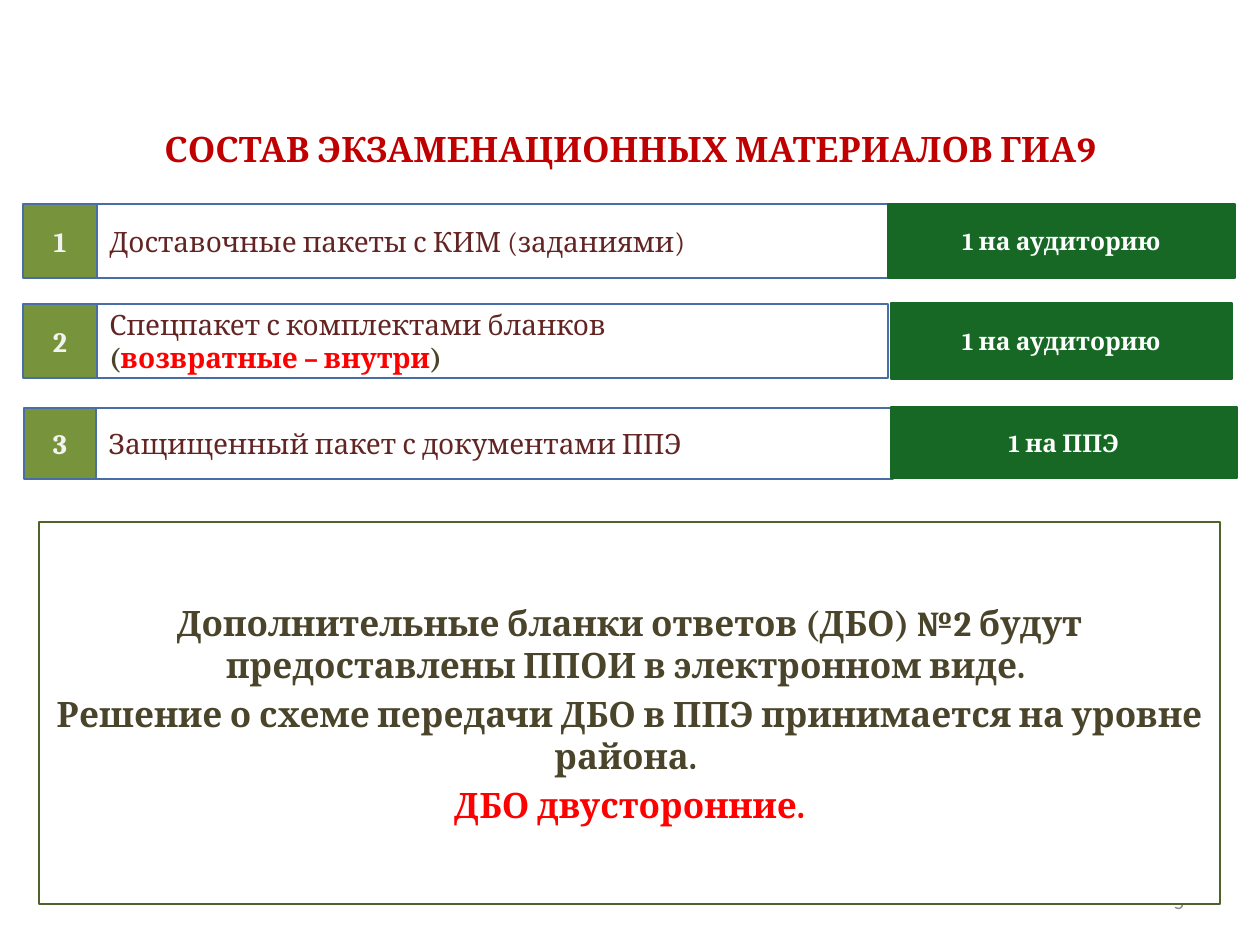
"""Build the slide listing the contents of the GIA-9 exam materials."""
from pptx import Presentation
from pptx.dml.color import RGBColor
from pptx.enum.shapes import MSO_SHAPE
from pptx.enum.text import MSO_ANCHOR, PP_ALIGN
from pptx.util import Emu, Pt

RECT = MSO_SHAPE.RECTANGLE
TOP, MIDDLE = MSO_ANCHOR.TOP, MSO_ANCHOR.MIDDLE
LEFT, CENTER, RIGHT = PP_ALIGN.LEFT, PP_ALIGN.CENTER, PP_ALIGN.RIGHT
PX = 914400 / 126

RED, MAROON, OLIVE = "FF0000", "632523", "4A452A"
BLUE, GREEN, BADGE = "496DA7", "166824", "77933C"

TITLE = "СОСТАВ ЭКЗАМЕНАЦИОННЫХ МАТЕРИАЛОВ ГИА9"
ROWS = [
    {"label": ["Доставочные пакеты с КИМ (заданиями)"], "count": "1 на аудиторию",
     "y": 204, "h": 74, "edges": (23, 97, 888), "count_box": (888, 204, 347, 74)},
    {"label": ["Спецпакет с комплектами бланков",
               [("(", OLIVE, True), ("возвратные – внутри", RED, True), (")", OLIVE, True)]],
     "count": "1 на аудиторию",
     "y": 304, "h": 74, "edges": (23, 97, 888), "count_box": (891, 303, 341, 76)},
    {"label": ["Защищенный пакет с документами ППЭ"], "count": "1 на ППЭ",
     "y": 408, "h": 71, "edges": (24, 96, 893), "count_box": (891, 407, 346, 71)},
]
NOTES = [
    "Дополнительные бланки ответов (ДБО) №2 будут предоставлены ППОИ в электронном виде. ",
    "Решение о схеме передачи ДБО в ППЭ принимается на уровне района. ",
    [("ДБО двусторонние.", RED, True)],
]
PAGE = "5"


def rgb(value):
    return RGBColor.from_string(value)


def px(*values):
    return [Emu(round(v * PX)) for v in values]


def write(s, paragraphs, size=16, color=OLIVE, bold=False, align=CENTER,
          anchor=MIDDLE, font="Cambria", before=0):
    tf = s.text_frame
    tf.word_wrap = True
    tf.vertical_anchor = anchor
    for i, runs in enumerate(paragraphs):
        p = tf.paragraphs[0] if i == 0 else tf.add_paragraph()
        p.alignment = align
        if i and before:
            p.space_before = Pt(before)
        if isinstance(runs, str):
            runs = [(runs, color, bold)]
        for text, run_color, run_bold in runs:
            r = p.add_run()
            r.text = text
            r.font.name = font
            r.font.size = Pt(size)
            r.font.bold = run_bold
            r.font.color.rgb = rgb(run_color)


def add_box(slide, box, line, fill=None, width=1):
    sp = slide.shapes.add_shape(RECT, *px(*box))
    sp.shadow.inherit = False
    if fill:
        sp.fill.solid()
        sp.fill.fore_color.rgb = rgb(fill)
    else:
        sp.fill.background()
    sp.line.color.rgb = rgb(line)
    sp.line.width = Pt(width)
    return sp


def add_row(slide, number, row):
    left, middle, right = row["edges"]
    y, h = row["y"], row["h"]
    label = add_box(slide, (middle, y, right - middle, h), BLUE)
    write(label, row["label"], color=MAROON, align=LEFT)
    badge = add_box(slide, (left, y, middle - left, h), BLUE, BADGE)
    write(badge, [str(number)], color="F2F2F2", bold=True)
    count = add_box(slide, row["count_box"], GREEN, GREEN)
    write(count, [row["count"]], size=14, color="FFFFFF", bold=True)


def main():
    prs = Presentation()
    prs.slide_width, prs.slide_height = px(1260, 945)
    slide = prs.slides.add_slide(prs.slide_layouts[6])

    title = slide.shapes.add_textbox(*px(0, 121, 1260, 55))
    write(title, [TITLE], size=20, color="C00000", bold=True, anchor=TOP)
    for number, row in enumerate(ROWS, 1):
        add_row(slide, number, row)

    page = slide.shapes.add_textbox(*px(903, 876, 294, 50))
    write(page, [PAGE], size=12, color="898989", align=RIGHT, font="Calibri")
    notes = add_box(slide, (39, 522, 1181, 382), "4F6228", "FFFFFF", 1.5)
    write(notes, NOTES, size=20, bold=True, before=4)
    prs.save("out.pptx")


if __name__ == "__main__":
    main()
